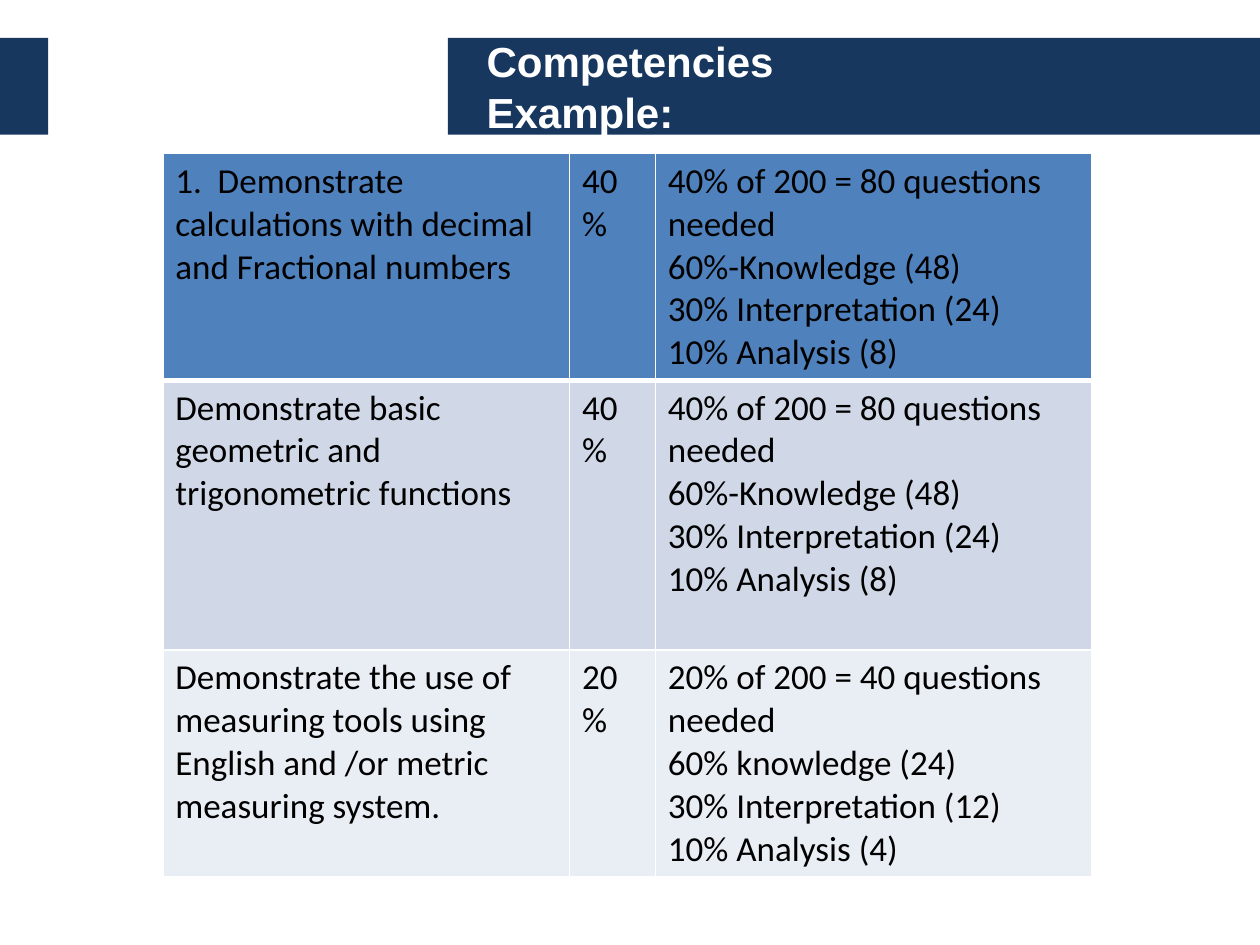
from dataclasses import dataclass

from lxml.etree import SubElement
from pptx import Presentation
from pptx.dml.color import RGBColor
from pptx.enum.shapes import MSO_SHAPE
from pptx.enum.text import MSO_ANCHOR
from pptx.oxml.ns import qn
from pptx.slide import Slide
from pptx.table import _Cell
from pptx.text.text import _Paragraph
from pptx.util import Pt


@dataclass(frozen=True)
class Theme:
    navy: str = "17375E"
    white: str = "FFFFFF"
    ink: str = "000000"
    heading_font: str = "Arial"
    body_font: str = "Calibri"
    heading_size: float = 24
    body_size: float = 20
    thin_border: float = 1
    thick_border: float = 3


@dataclass(frozen=True)
class Band:
    left: float
    width: float


@dataclass(frozen=True)
class Competency:
    skill: str
    weight: str
    questions: tuple[str, ...]
    height: float
    fill: str
    bottom_border: float


THEME = Theme()
BAND_TOP, BAND_HEIGHT = 21.6, 55.4
BANDS = (Band(256, 464), Band(0, 27.5))
TABLE_LEFT, TABLE_TOP = 93, 87.8
COLUMN_WIDTHS = (232.5, 49, 249.5)

COMPETENCIES = (
    Competency(
        "1.  Demonstrate calculations with decimal and Fractional numbers", "40%",
        ("40% of 200 = 80 questions needed", "60%-Knowledge (48)",
         "30% Interpretation (24)", "10% Analysis (8)"),
        129.6, "4F81BD", THEME.thick_border),
    Competency(
        "Demonstrate basic geometric and trigonometric functions", "40%",
        ("40% of 200 = 80 questions needed", "60%-Knowledge (48)",
         "30% Interpretation (24)", "10% Analysis (8)"),
        154.2, "D0D8E8", THEME.thin_border),
    Competency(
        "Demonstrate the use of measuring tools using English and /or metric "
        "measuring system.", "20%",
        ("20% of 200 = 40 questions needed", "60% knowledge (24)",
         "30% Interpretation (12)", "10% Analysis (4)"),
        129.6, "E9EDF4", THEME.thin_border),
)


def format_text(paragraph: _Paragraph, color: str, **values) -> None:
    for name, value in values.items():
        setattr(paragraph.font, name, value)
    paragraph.font.color.rgb = RGBColor.from_string(color)


def draw_band(slide: Slide, band: Band) -> None:
    bar = slide.shapes.add_shape(MSO_SHAPE.RECTANGLE, Pt(band.left), Pt(BAND_TOP),
                                 Pt(band.width), Pt(BAND_HEIGHT))
    bar.shadow.inherit = False
    bar.fill.solid()
    bar.fill.fore_color.rgb = RGBColor.from_string(THEME.navy)
    bar.line.fill.background()


def draw_heading(slide: Slide) -> None:
    heading = slide.shapes.add_textbox(Pt(271), Pt(BAND_TOP), Pt(413), Pt(BAND_HEIGHT))
    frame = heading.text_frame
    frame.word_wrap = True
    frame.vertical_anchor = MSO_ANCHOR.MIDDLE
    frame.text = "Competencies \vExample:"
    format_text(frame.paragraphs[0], THEME.white, name=THEME.heading_font,
                size=Pt(THEME.heading_size), bold=True)


def draw_borders(cell: _Cell, top: float, bottom: float) -> None:
    properties = cell._tc.get_or_add_tcPr()
    widths = {"lnL": THEME.thin_border, "lnR": THEME.thin_border,
              "lnT": top, "lnB": bottom}
    for side, width in widths.items():
        border = SubElement(properties, qn(f"a:{side}"), w=str(int(Pt(width))))
        paint = SubElement(border, qn("a:solidFill"))
        SubElement(paint, qn("a:srgbClr"), val=THEME.white)


def fill_cell(cell: _Cell, lines: tuple[str, ...], color: str,
              top: float, bottom: float) -> None:
    draw_borders(cell, top, bottom)
    cell.fill.solid()
    cell.fill.fore_color.rgb = RGBColor.from_string(color)
    cell.text = "\n".join(lines)
    for paragraph in cell.text_frame.paragraphs:
        format_text(paragraph, THEME.ink, name=THEME.body_font,
                    size=Pt(THEME.body_size), bold=False)


def draw_competencies(slide: Slide) -> None:
    grid = slide.shapes.add_table(
        len(COMPETENCIES), len(COLUMN_WIDTHS), Pt(TABLE_LEFT), Pt(TABLE_TOP),
        Pt(sum(COLUMN_WIDTHS)), Pt(sum(item.height for item in COMPETENCIES))).table
    for column, width in zip(grid.columns, COLUMN_WIDTHS):
        column.width = Pt(width)
    top = THEME.thin_border
    for row, item in zip(grid.rows, COMPETENCIES):
        row.height = Pt(item.height)
        contents = ((item.skill,), (item.weight,), item.questions)
        for cell, lines in zip(row.cells, contents):
            fill_cell(cell, lines, item.fill, top, item.bottom_border)
        top = item.bottom_border


def main() -> None:
    deck = Presentation()
    deck.slide_width, deck.slide_height = Pt(720), Pt(540)
    slide = deck.slides.add_slide(deck.slide_layouts[6])

    # Heading bands and title
    for band in BANDS:
        draw_band(slide, band)
    draw_heading(slide)

    # Competency weights and question counts
    draw_competencies(slide)

    deck.save("out.pptx")


if __name__ == "__main__":
    main()
